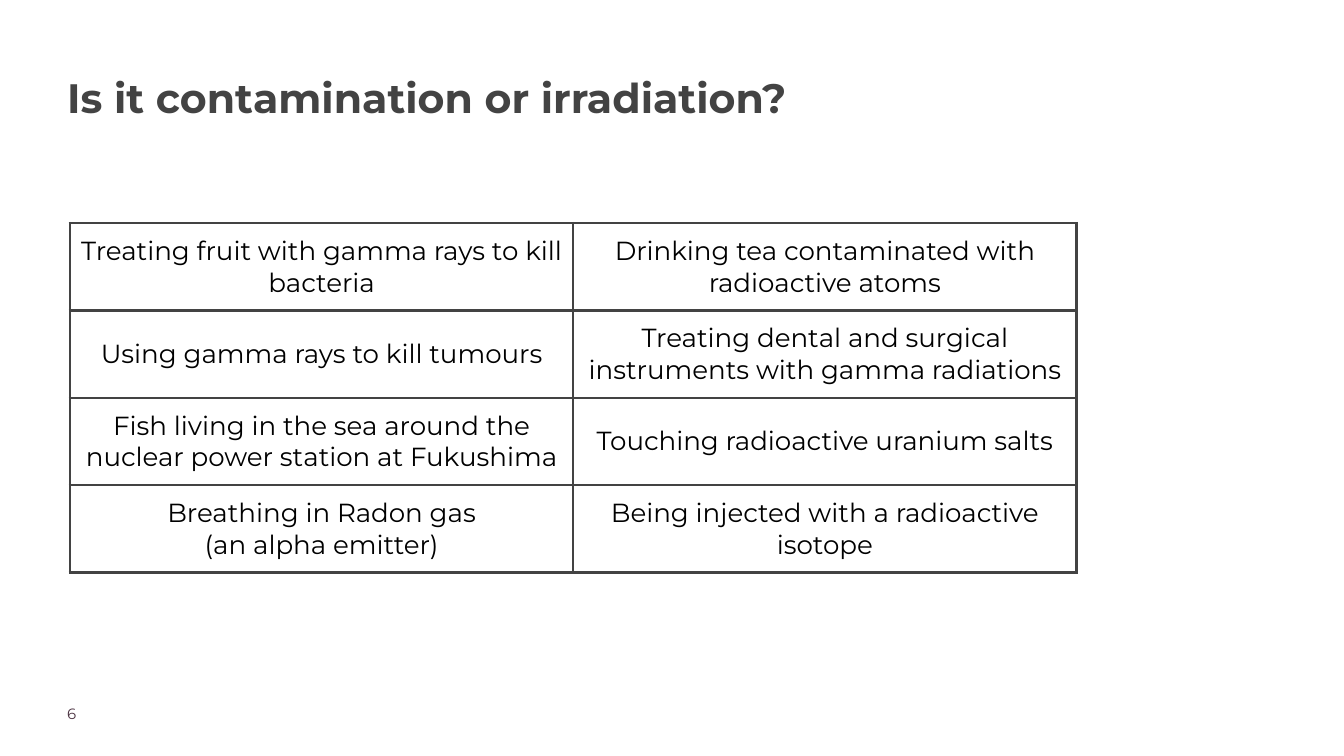
"""Build a slide with a table of contamination and irradiation examples."""
import pptx
import pptx.dml.color
import pptx.enum.text
import pptx.oxml
import pptx.oxml.ns
import pptx.util
from pptx.util import Inches

FONT = "Montserrat"
DARK = "434343"
TITLE = "Is it contamination or irradiation?"
PAGE_NUMBER = "6"
EXAMPLES = [
    ("Treating fruit with gamma rays to kill bacteria",
     "Drinking tea contaminated with radioactive atoms"),
    ("Using gamma rays to kill tumours",
     "Treating dental and surgical instruments with gamma radiations"),
    ("Fish living in the sea around the nuclear power station at Fukushima",
     "Touching radioactive uranium salts"),
    ("Breathing in Radon gas\n(an alpha emitter)",
     "Being injected with a radioactive isotope"),
]
COLUMN_WIDTH, ROW_HEIGHT = 7.49, 1.3
CELL_MARGIN = 0.1
BORDER_POINTS = 3


def style(paragraph, size, color, bold=False):
    font = paragraph.font
    font.name = FONT
    font.size = pptx.util.Pt(size)
    font.bold = bold
    font.color.rgb = pptx.dml.color.RGBColor.from_string(color)


def add_line(slide, text, left, top, width, height, size, color, bold=False):
    frame = slide.shapes.add_textbox(
        Inches(left), Inches(top), Inches(width), Inches(height)).text_frame
    frame.word_wrap = True
    frame.margin_left = frame.margin_right = 0
    frame.margin_top = frame.margin_bottom = 0
    frame.text = text
    style(frame.paragraphs[0], size, color, bold)
    return frame.paragraphs[0]


def add_borders(cell):
    properties = cell._tc.get_or_add_tcPr()
    for position, side in enumerate(("lnL", "lnR", "lnT", "lnB")):
        properties.insert(position, pptx.oxml.parse_xml(
            f'<a:{side} {pptx.oxml.ns.nsdecls("a")} w="{pptx.util.Pt(BORDER_POINTS)}">'
            f'<a:solidFill><a:srgbClr val="{DARK}"/></a:solidFill></a:{side}>'))


def fill_cell(cell, example):
    cell.fill.background()
    cell.vertical_anchor = pptx.enum.text.MSO_ANCHOR.MIDDLE
    cell.margin_left = cell.margin_right = Inches(CELL_MARGIN)
    cell.margin_top = cell.margin_bottom = Inches(CELL_MARGIN)
    cell.text = example
    for paragraph in cell.text_frame.paragraphs:
        paragraph.alignment = pptx.enum.text.PP_ALIGN.CENTER
        style(paragraph, 28, "000000")
    add_borders(cell)


def add_examples(slide):
    rows, columns = len(EXAMPLES), len(EXAMPLES[0])
    table = slide.shapes.add_table(
        rows, columns, Inches(1.04), Inches(3.32),
        Inches(columns * COLUMN_WIDTH), Inches(rows * ROW_HEIGHT)).table
    table.first_row = table.horz_banding = False
    for row, examples in enumerate(EXAMPLES):
        for column, example in enumerate(examples):
            fill_cell(table.cell(row, column), example)


def main():
    deck = pptx.Presentation()
    deck.slide_width, deck.slide_height = Inches(20), Inches(11.25)
    slide = deck.slides.add_slide(deck.slide_layouts[6])
    add_line(slide, PAGE_NUMBER, 1, 10.48, 1.57, 0.39, 16, "4B3241")
    title = add_line(slide, TITLE, 1, 0.97, 16.28, 1.78, 44, DARK, bold=True)
    title.line_spacing = 1.15
    add_examples(slide)
    deck.save("out.pptx")


if __name__ == "__main__":
    main()
